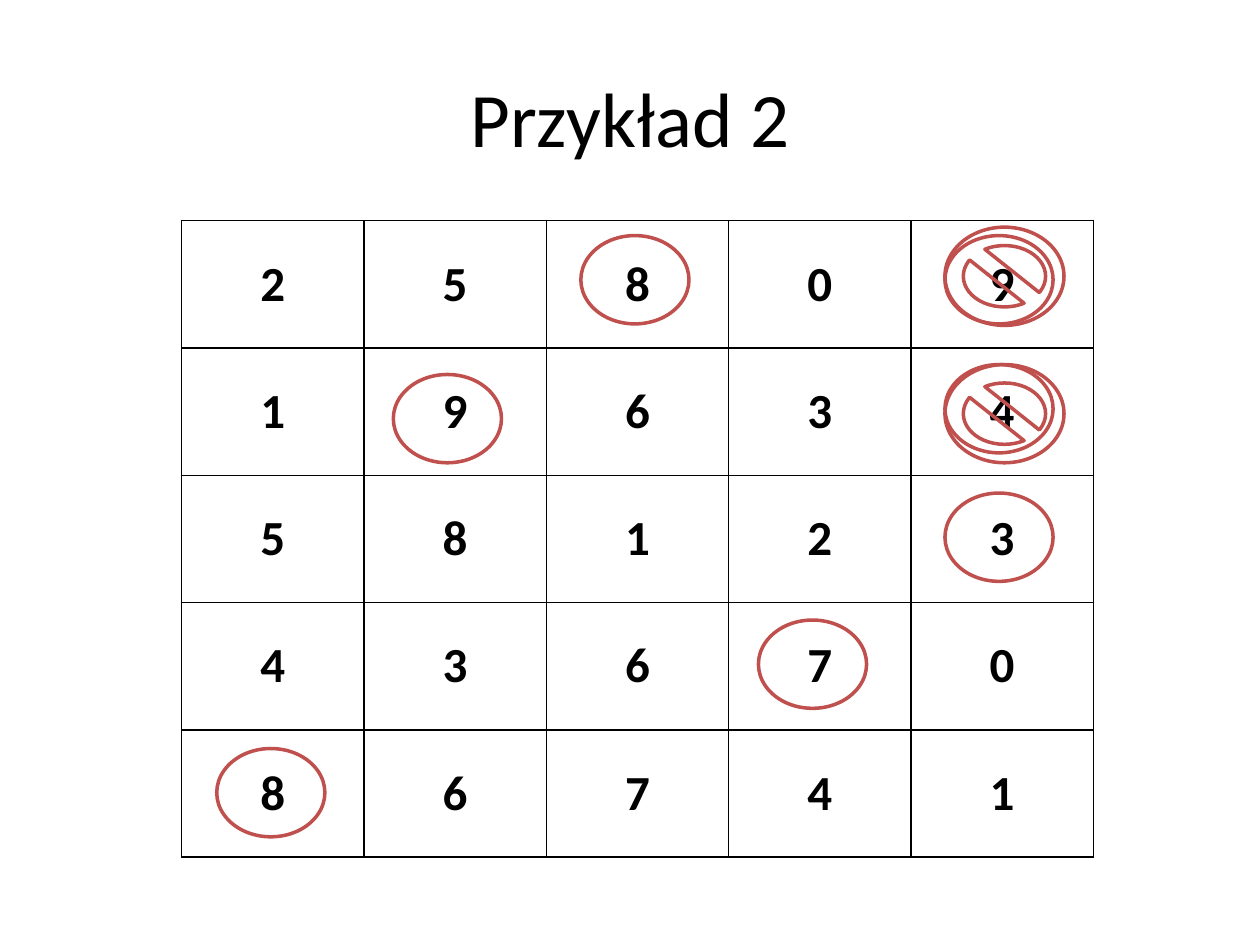
from lxml import etree
from pptx import Presentation
from pptx.dml.color import RGBColor
from pptx.enum import shapes, text
from pptx.oxml import ns
from pptx.util import Cm, Pt

BLACK = RGBColor(0x00, 0x00, 0x00)
RED = RGBColor(0xC0, 0x50, 0x4D)
FONT = "Calibri"

NUMBERS = ["25809", "19634", "58123", "43670", "86741"]

# Marks: left and top in cm, measured from the grid's corner
CIRCLE_SIZE = (2.18, 1.78)
BAN_SIZE = (2.4, 1.98)
LAST_COLUMN = 15.39
CIRCLES = [(0.71, 10.64), (4.27, 3.1), (8.05, 0.3), (11.63, 8.05),
           (LAST_COLUMN, 0.3), (LAST_COLUMN, 2.9), (LAST_COLUMN, 5.49)]
BANS = [(LAST_COLUMN, 0.13), (LAST_COLUMN, 2.9)]


def format_text(frame, size, bold):
    frame.vertical_anchor = text.MSO_ANCHOR.MIDDLE
    paragraph = frame.paragraphs[0]
    paragraph.alignment = text.PP_ALIGN.CENTER
    font = paragraph.runs[0].font
    for name, value in {"name": FONT, "size": Pt(size), "bold": bold}.items():
        setattr(font, name, value)
    font.color.rgb = BLACK


def add_heading(slide, left, top, width, height):
    heading = slide.shapes.title
    box = {"left": left, "top": top, "width": width, "height": height}
    for name, value in box.items():
        setattr(heading, name, Cm(value))
    heading.text_frame.text = "Przykład 2"
    format_text(heading.text_frame, 44, False)


def add_borders(cell):
    properties = cell._tc.get_or_add_tcPr()
    for side in ("a:lnL", "a:lnR", "a:lnT", "a:lnB"):
        line = etree.SubElement(properties, ns.qn(side), w=str(Pt(1)))
        fill = etree.SubElement(line, ns.qn("a:solidFill"))
        etree.SubElement(fill, ns.qn("a:srgbClr"), val=str(BLACK))


def add_number_grid(slide, left, top, width, height):
    grid = slide.shapes.add_table(
        len(NUMBERS), len(NUMBERS[0]),
        Cm(left), Cm(top), Cm(width), Cm(height)).table
    grid.first_row = grid.horz_banding = False
    for row, digits in zip(grid.rows, NUMBERS):
        for cell, digit in zip(row.cells, digits):
            cell.text = digit
            format_text(cell.text_frame, 28, True)
            cell.vertical_anchor = text.MSO_ANCHOR.MIDDLE
            add_borders(cell)
            cell.fill.background()


def add_marks(slide, left, top, preset, places, size):
    width, height = size
    for x, y in places:
        mark = slide.shapes.add_shape(
            preset, Cm(left + x), Cm(top + y), Cm(width), Cm(height))
        mark.shadow.inherit = False
        mark.fill.background()
        mark.line.color.rgb = RED
        mark.line.width = Pt(2)


def main():
    deck = Presentation()
    deck.slide_width, deck.slide_height = Cm(25.4), Cm(19.05)
    slide = deck.slides.add_slide(deck.slide_layouts.get_by_name("Title Only"))

    add_heading(slide, 1.27, 0.76, 22.86, 3.18)
    left, top = 3.66, 4.45
    add_number_grid(slide, left, top, 18.38, 12.83)
    add_marks(slide, left, top, shapes.MSO_SHAPE.OVAL, CIRCLES, CIRCLE_SIZE)
    add_marks(slide, left, top, shapes.MSO_SHAPE.NO_SYMBOL, BANS, BAN_SIZE)

    deck.save("out.pptx")


if __name__ == "__main__":
    main()
